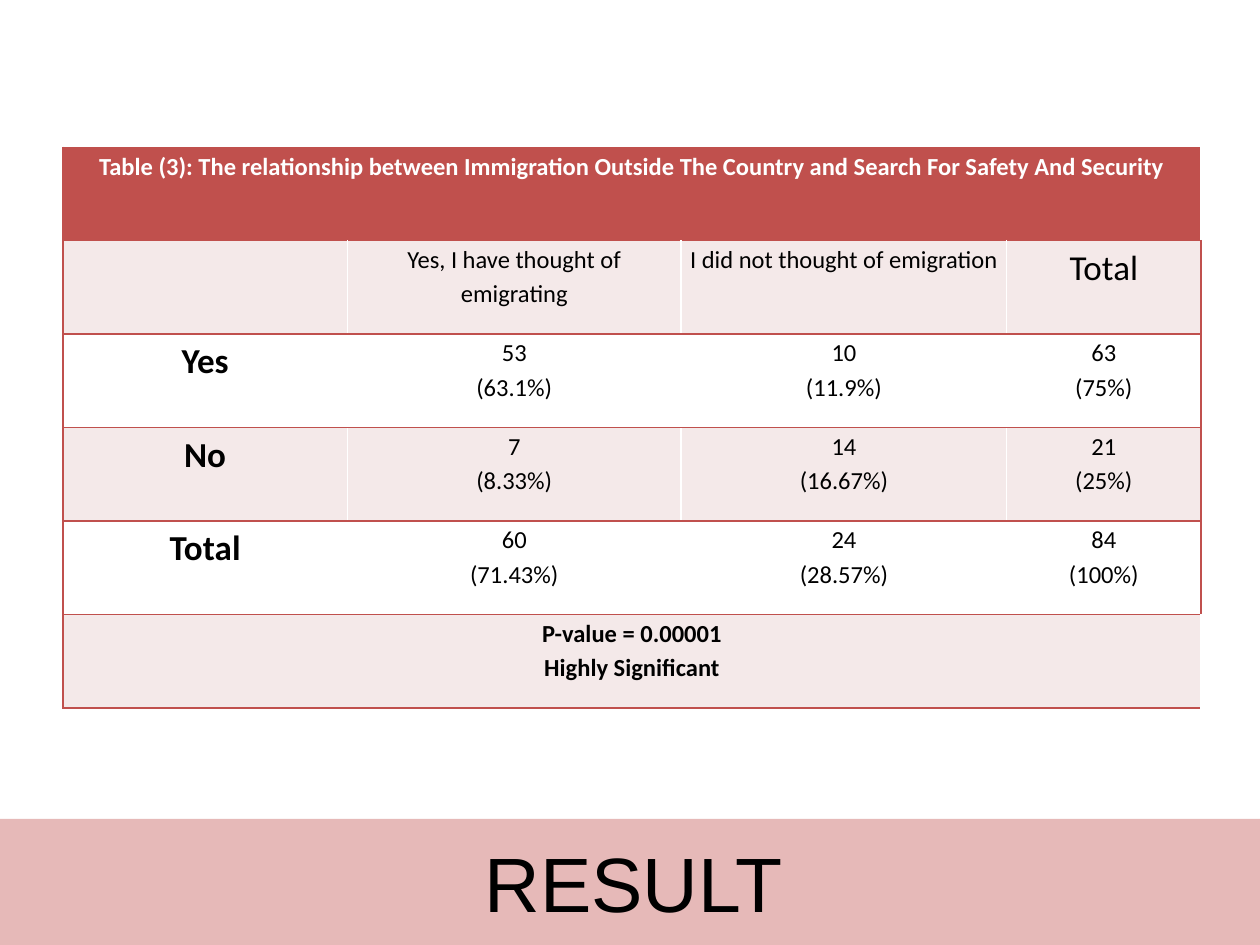
from lxml.etree import SubElement
from pptx import Presentation
from pptx.dml.color import RGBColor
from pptx.enum.shapes import MSO_SHAPE
from pptx.enum.text import MSO_ANCHOR, PP_ALIGN
from pptx.oxml.ns import qn
from pptx.util import Pt

TITLE = "RESULT"
ROWS = [
    ["Table (3): The relationship between Immigration Outside The Country and Search For Safety And Security"],
    ["", "Yes, I have thought of emigrating", "I did not thought of emigration", "Total"],
    ["Yes", "53\n(63.1%)", "10\n(11.9%)", "63\n(75%)"],
    ["No", "7\n(8.33%)", "14\n(16.67%)", "21\n(25%)"],
    ["Total", "60\n(71.43%)", "24\n(28.57%)", "84\n(100%)"],
    ["P-value = 0.00001\nHighly Significant"],
]
COLUMN_WIDTHS = [162.5, 190.8, 186, 111]
ROW_HEIGHT = 53.4
LEFT, TOP = 36, 84.2
RED, PALE, WHITE, BLACK = "C0504D", "F4E9E9", "FFFFFF", "000000"
BAND = "E6B9B8"
CELL_FORMAT = {"margin_left": Pt(5), "margin_right": Pt(5), "margin_top": 0, "margin_bottom": 0}


def apply(target, values):
    for name, value in values.items():
        setattr(target, name, value)


def paint(fill, color):
    fill.solid()
    fill.fore_color.rgb = RGBColor.from_string(color)


def write(text_frame, text, line_spacing, color, **font):
    text_frame.text = text
    for paragraph in text_frame.paragraphs:
        apply(paragraph, {"alignment": PP_ALIGN.CENTER, "line_spacing": line_spacing})
        apply(paragraph.font, font)
        for run in paragraph.runs:
            apply(run.font, font)
            run.font.color.rgb = RGBColor.from_string(color)


def add_borders(cell, sides, color):
    properties = cell._tc.get_or_add_tcPr()
    for side in sides:
        line = SubElement(properties, qn(f"a:ln{side}"), w=str(Pt(1)))
        fill = SubElement(line, qn("a:solidFill"))
        SubElement(fill, qn("a:srgbClr"), val=color)


def add_title(slide):
    shape = slide.shapes.add_shape(MSO_SHAPE.RECTANGLE, Pt(-0.7), Pt(468), Pt(725.8), Pt(72))
    shape.shadow.inherit = False
    shape.line.fill.background()
    paint(shape.fill, BAND)
    shape.text_frame.vertical_anchor = MSO_ANCHOR.MIDDLE
    write(shape.text_frame, TITLE, 1.0, BLACK, size=Pt(44), name="Arial")


def add_result_table(slide):
    last_row, last_column = len(ROWS) - 1, len(COLUMN_WIDTHS) - 1
    table = slide.shapes.add_table(
        len(ROWS), len(COLUMN_WIDTHS), Pt(LEFT), Pt(TOP),
        Pt(sum(COLUMN_WIDTHS)), Pt(ROW_HEIGHT * len(ROWS))).table
    for column, width in zip(table.columns, COLUMN_WIDTHS):
        column.width = Pt(width)
    for i, texts in enumerate(ROWS):
        table.rows[i].height = Pt(ROW_HEIGHT)
        merged = len(texts) == 1
        if merged:
            table.cell(i, 0).merge(table.cell(i, last_column))
        for j in range(last_column + 1):
            cell = table.cell(i, j)
            apply(cell, CELL_FORMAT)
            sides = ["L"] * (j == 0) + ["R"] * (j == last_column) + ["T", "B"]
            add_borders(cell, sides, RED)
            paint(cell.fill, RED if i == 0 else PALE if i % 2 else WHITE)
            if j < len(texts):
                row_label = j == 0 and not merged
                corner = i == 1 and j == last_column
                write(cell.text_frame, texts[j], 1.15, WHITE if i == 0 else BLACK,
                      size=Pt(20 if row_label or corner else 14),
                      bold=merged or row_label, name="Calibri")


def main():
    presentation = Presentation()
    apply(presentation, {"slide_width": Pt(720), "slide_height": Pt(540)})
    slide = presentation.slides.add_slide(presentation.slide_layouts[6])
    add_title(slide)
    add_result_table(slide)
    presentation.save("out.pptx")


if __name__ == "__main__":
    main()
